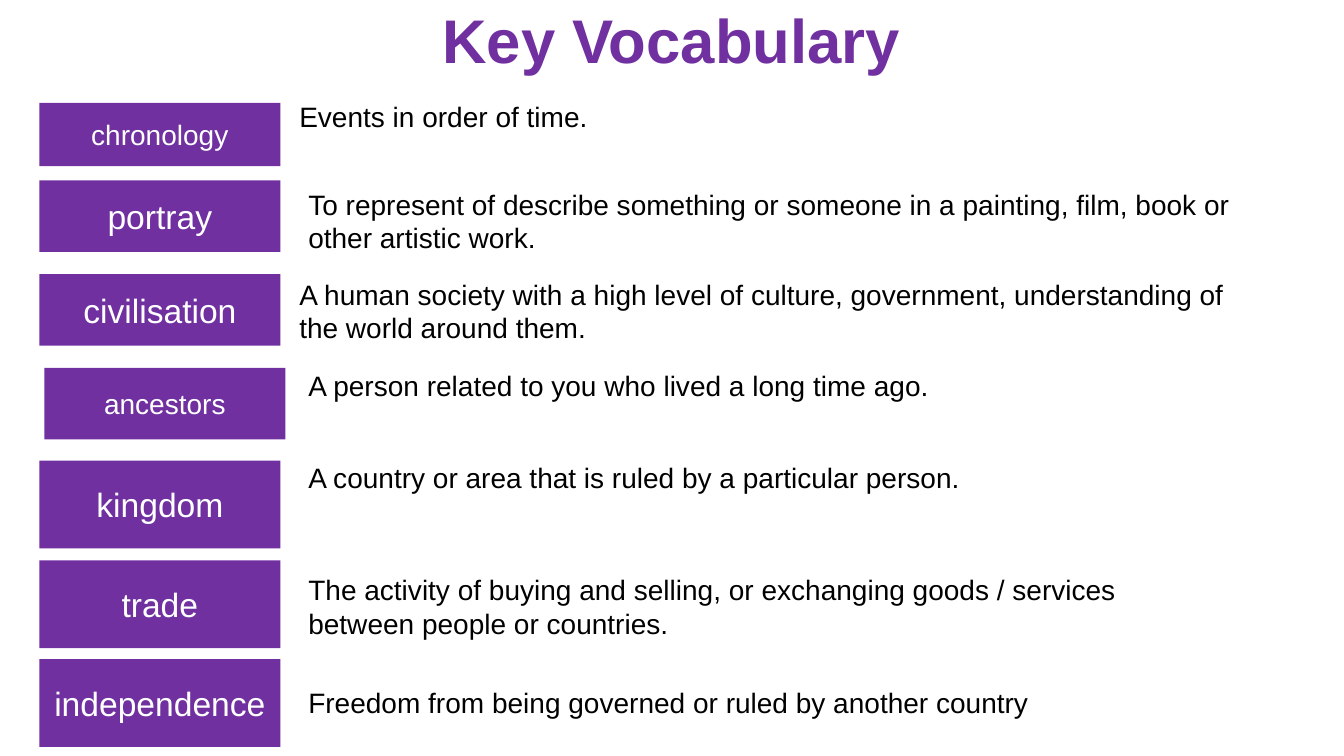
from pptx import Presentation
from pptx.dml.color import RGBColor
from pptx.enum.shapes import MSO_SHAPE
from pptx.enum.text import MSO_ANCHOR, PP_ALIGN
from pptx.util import Inches, Pt

RECTANGLE = MSO_SHAPE.RECTANGLE
TOP, MIDDLE = MSO_ANCHOR.TOP, MSO_ANCHOR.MIDDLE
LEFT, CENTER = PP_ALIGN.LEFT, PP_ALIGN.CENTER

FONT = "Arial"
PURPLE, WHITE, BLACK = "7030A0", "FFFFFF", "000000"
TERM_LEFT, TERM_WIDTH = 0.39, 2.39

TITLE = "Key Vocabulary"
VOCABULARY = [
    {"term": "chronology", "size": 20, "top": 1.02, "height": 0.63,
     "meaning": "Events in order of time.",
     "area": (2.87, 0.94, 10.23, 0.77)},
    {"term": "portray", "size": 24, "top": 1.79, "height": 0.71,
     "meaning": "To represent of describe something or someone in a painting, "
                "film, book or other artistic work.",
     "area": (2.96, 1.81, 9.44, 0.77)},
    {"term": "civilisation", "size": 24, "top": 2.72, "height": 0.71,
     "meaning": "A human society with a high level of culture, government, "
                "understanding of the world around them.",
     "area": (2.87, 2.7, 9.53, 0.77)},
    {"term": "ancestors", "size": 20, "top": 3.65, "height": 0.71, "shift": 0.05,
     "meaning": "A person related to you who lived a long time ago.",
     "area": (2.96, 3.61, 10.15, 0.77)},
    {"term": "kingdom", "size": 24, "top": 4.57, "height": 0.87,
     "meaning": "A country or area that is ruled by a particular person.",
     "area": (2.96, 4.52, 6.93, 0.44)},
    {"term": "trade", "size": 24, "top": 5.56, "height": 0.87, "plain": True,
     "meaning": "The activity of buying and selling, or exchanging goods / "
                "services between people or countries.",
     "area": (2.96, 5.63, 9.33, 0.77)},
    {"term": "independence", "size": 24, "top": 6.54, "height": 0.87,
     "meaning": "Freedom from being governed or ruled by another country",
     "area": (2.96, 6.75, 7.83, 0.33)},
]


def color(value):
    return RGBColor.from_string(value)


def add_text(page, text, area, size, ink, fill=None, align=LEFT, anchor=TOP, bold=False):
    place = [Inches(length) for length in area]
    if fill:
        box = page.shapes.add_shape(RECTANGLE, *place)
        box.shadow.inherit = False
        box.fill.solid()
        box.fill.fore_color.rgb = color(fill)
        box.line.fill.background()
    else:
        box = page.shapes.add_textbox(*place)
    frame = box.text_frame
    frame.word_wrap = True
    frame.vertical_anchor = anchor
    para = frame.paragraphs[0]
    para.alignment = align
    span = para.add_run()
    span.text = text
    span.font.name = FONT
    span.font.size = Pt(size)
    span.font.bold = bold
    span.font.color.rgb = color(ink)


def main():
    deck = Presentation()
    deck.slide_width, deck.slide_height = Inches(13.33), Inches(7.5)
    page = deck.slides.add_slide(deck.slide_layouts[6])
    add_text(page, TITLE, (2.53, -0.24, 8.26, 1.26), 44, PURPLE,
             align=CENTER, anchor=MIDDLE, bold=True)
    for entry in VOCABULARY:
        left = TERM_LEFT + entry.get("shift", 0)
        term_area = (left, entry["top"], TERM_WIDTH, entry["height"])
        add_text(page, entry["term"], term_area, entry["size"], WHITE,
                 fill=PURPLE, align=CENTER, anchor=MIDDLE)
        add_text(page, entry["meaning"], entry["area"], 20, BLACK,
                 fill=None if entry.get("plain") else WHITE)
    deck.save("out.pptx")


if __name__ == "__main__":
    main()
